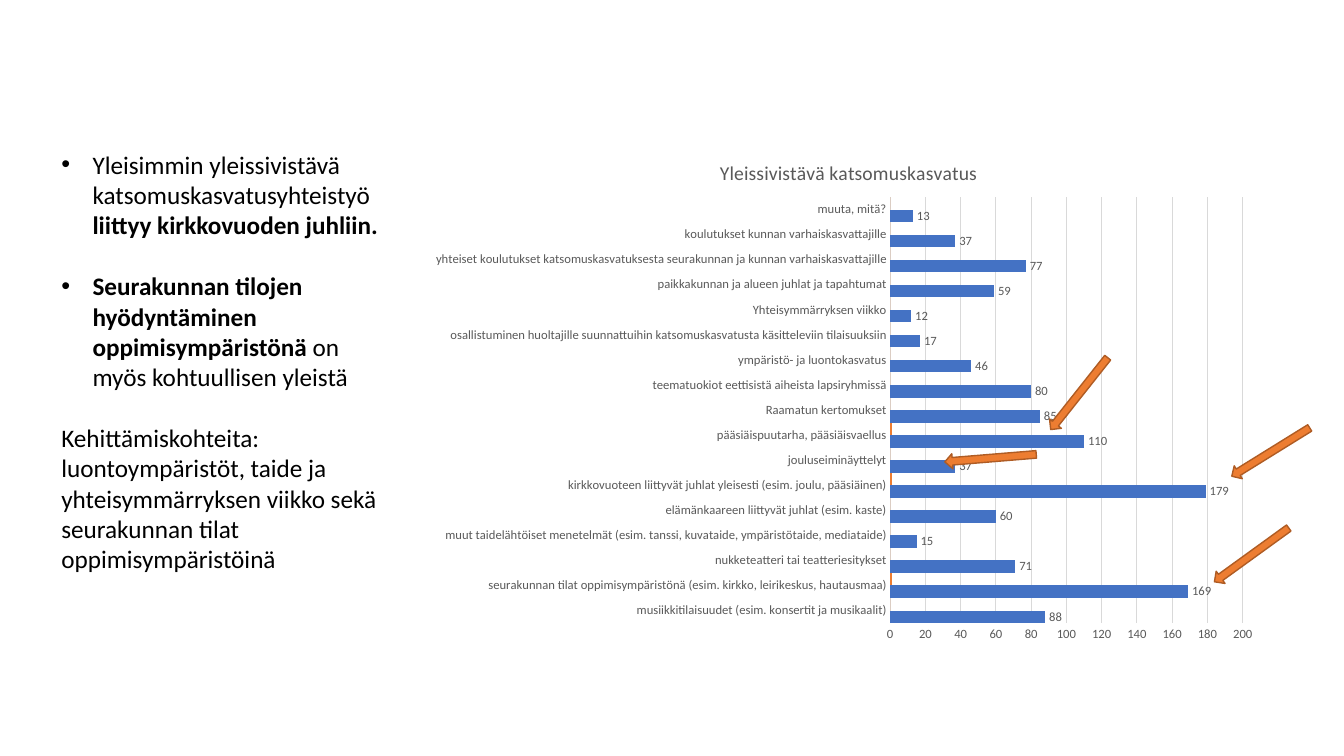
from dataclasses import dataclass

from lxml import etree
from pptx import Presentation, util as u
from pptx.chart.data import CategoryChartData
from pptx.dml.color import RGBColor
from pptx.enum import chart as ch, shapes, text
from pptx.oxml.ns import qn


@dataclass(frozen=True)
class Theme:
    font: str = "Calibri"
    ink: str = "000000"
    muted: str = "595959"
    grid: str = "D9D9D9"
    blue: str = "4472C4"
    orange: str = "ED7D31"
    arrow_edge: str = "AF5C24"
    body: int = 18
    title: int = 14
    label: int = 9
    paragraph_gap: int = 22
    columns: int = 40
    rows: int = 30


CHART_TITLE = "Yleissivistävä katsomuskasvatus"
ACTIVITIES = [
    ("musiikkitilaisuudet (esim. konsertit ja musikaalit)", 88, 0),
    ("seurakunnan tilat oppimisympäristönä (esim. kirkko, leirikeskus, hautausmaa)", 169, 1),
    ("nukketeatteri tai teatteriesitykset", 71, 0),
    ("muut taidelähtöiset menetelmät (esim. tanssi, kuvataide, ympäristötaide, mediataide)", 15, 0),
    ("elämänkaareen liittyvät juhlat (esim. kaste)", 60, 0),
    ("kirkkovuoteen liittyvät juhlat yleisesti (esim. joulu, pääsiäinen)", 179, 1),
    ("jouluseiminäyttelyt", 37, 0),
    ("pääsiäispuutarha, pääsiäisvaellus", 110, 1),
    ("Raamatun kertomukset", 85, 0),
    ("teematuokiot eettisistä aiheista lapsiryhmissä", 80, 0),
    ("ympäristö- ja luontokasvatus", 46, 0),
    ("osallistuminen huoltajille suunnattuihin katsomuskasvatusta käsitteleviin tilaisuuksiin", 17, 0),
    ("Yhteisymmärryksen viikko", 12, 0),
    ("paikkakunnan ja alueen juhlat ja tapahtumat", 59, 0),
    ("yhteiset koulutukset katsomuskasvatuksesta seurakunnan ja kunnan varhaiskasvattajille", 77, 0),
    ("koulutukset kunnan varhaiskasvattajille", 37, 0),
    ("muuta, mitä?", 13, 0),
]
# Each paragraph: bulleted, gap before it, (wording, bold) pieces
FINDINGS = [
    (True, False, [("Yleisimmin yleissivistävä katsomuskasvatusyhteistyö ", False),
                   ("liittyy kirkkovuoden juhliin.", True)]),
    (True, True, [("Seurakunnan tilojen hyödyntäminen oppimisympäristönä", True),
                  (" on myös kohtuullisen yleistä", False)]),
    (False, True, [("Kehittämiskohteita:", False)]),
    (False, False, [("luontoympäristöt, taide ja yhteisymmärryksen viikko sekä "
                     "seurakunnan tilat oppimisympäristöinä", False)]),
]
# Centre column, centre row, rotation
ARROWS = [(37.82, 17.94, 58.2), (32.12, 15.62, 38.4),
          (29.48, 18.18, 85.3), (37.25, 22.02, 54.1)]


def rgb(value):
    return RGBColor.from_string(value)


def add_bullet(paragraph):
    props = paragraph._p.get_or_add_pPr()
    props.set("marL", str(u.Inches(0.31)))
    props.set("indent", str(-u.Inches(0.31)))
    etree.SubElement(props, qn("a:buFont")).set("typeface", "Arial")
    etree.SubElement(props, qn("a:buChar")).set("char", "•")


def place(element, successor, **shares):
    """Fix a chart part at shares of the chart's size, ahead of successor."""
    for old in element.findall(qn("c:layout")):
        element.remove(old)
    layout = etree.Element(qn("c:layout"))
    manual = etree.SubElement(layout, qn("c:manualLayout"))
    if "w" in shares:
        etree.SubElement(manual, qn("c:layoutTarget")).set("val", "inner")
    for side in ("x", "y"):
        etree.SubElement(manual, qn(f"c:{side}Mode")).set("val", "edge")
    for side, share in shares.items():
        etree.SubElement(manual, qn(f"c:{side}")).set("val", str(share))
    element.find(qn(successor)).addprevious(layout)


class SlideBuilder:
    def __init__(self, deck, theme):
        self.theme = theme
        self.cell = (deck.slide_width / theme.columns, deck.slide_height / theme.rows)
        self.slide = deck.slides.add_slide(deck.slide_layouts[6])

    def box(self, column, row, columns, rows):
        across, down = self.cell
        return [u.Emu(round(n)) for n in
                (column * across, row * down, columns * across, rows * down)]

    def style(self, font, size, color, bold=False):
        font.name, font.size, font.bold = self.theme.font, u.Pt(size), bold
        font.color.rgb = rgb(color)

    def findings(self, area, paragraphs):
        frame = self.slide.shapes.add_textbox(*self.box(*area)).text_frame
        frame.word_wrap = True
        frame.auto_size = text.MSO_AUTO_SIZE.SHAPE_TO_FIT_TEXT
        for index, (bulleted, gap, pieces) in enumerate(paragraphs):
            paragraph = frame.add_paragraph() if index else frame.paragraphs[0]
            if gap:
                paragraph.space_before = u.Pt(self.theme.paragraph_gap)
            if bulleted:
                add_bullet(paragraph)
            for wording, bold in pieces:
                run = paragraph.add_run()
                run.text = wording
                self.style(run.font, self.theme.body, self.theme.ink, bold)

    def bar_chart(self, area, title, rows):
        theme = self.theme
        names, counts, marks = zip(*rows)
        data = CategoryChartData(number_format="0")
        data.categories = names
        data.add_series("Series 1", counts)
        data.add_series("Series 2", marks)
        chart = self.slide.shapes.add_chart(
            ch.XL_CHART_TYPE.BAR_CLUSTERED, *self.box(*area), data).chart
        self.style(chart.font, 10, theme.ink)
        chart.has_legend = False
        chart.has_title = True
        heading = chart.chart_title.text_frame
        heading.text = title
        self.style(heading.paragraphs[0].runs[0].font, theme.title, theme.muted)
        place(chart.chart_title._element, "c:overlay", x=0.35, y=0.04)

        plot = chart.plots[0]
        plot.gap_width, plot.overlap, plot.vary_by_categories = 0, 0, False
        place(chart._chartSpace.chart.plotArea, "c:barChart",
              x=0.554, y=0.12, w=0.414, h=0.824)
        for series, color in zip(plot.series, (theme.blue, theme.orange)):
            series.format.fill.solid()
            series.format.fill.fore_color.rgb = rgb(color)
        labels = plot.series[0].data_labels
        labels.show_value = True
        labels.number_format, labels.number_format_is_linked = "0", False
        labels.position = ch.XL_LABEL_POSITION.OUTSIDE_END
        self.style(labels.font, theme.label, theme.muted)

        names_axis, counts_axis = chart.category_axis, chart.value_axis
        for axis in (names_axis, counts_axis):
            axis.major_tick_mark = axis.minor_tick_mark = ch.XL_TICK_MARK.NONE
            self.style(axis.tick_labels.font, theme.label, theme.muted)
        counts_axis.minimum_scale, counts_axis.maximum_scale = 0, 200
        counts_axis.major_unit = 20
        counts_axis.format.line.fill.background()
        for line in (names_axis.format.line, counts_axis.major_gridlines.format.line):
            line.color.rgb, line.width = rgb(theme.grid), u.Pt(0.75)

    def arrow(self, column, row, rotation, width=0.45, height=3.64):
        arrow = self.slide.shapes.add_shape(
            shapes.MSO_SHAPE.DOWN_ARROW,
            *self.box(column - width / 2, row - height / 2, width, height))
        arrow.rotation = rotation
        arrow.shadow.inherit = False
        arrow.fill.solid()
        arrow.fill.fore_color.rgb = rgb(self.theme.orange)
        arrow.line.color.rgb, arrow.line.width = rgb(self.theme.arrow_edge), u.Pt(1)


def main():
    deck = Presentation()
    deck.slide_width, deck.slide_height = u.Inches(13.33), u.Inches(7.5)
    builder = SlideBuilder(deck, Theme())
    builder.bar_chart((12.45, 5.36, 25.35, 20.52), CHART_TITLE, ACTIVITIES)
    builder.findings((1.53, 5.72, 10.47, 18.56), FINDINGS)
    for arrow in ARROWS:
        builder.arrow(*arrow)
    deck.save("out.pptx")


if __name__ == "__main__":
    main()
